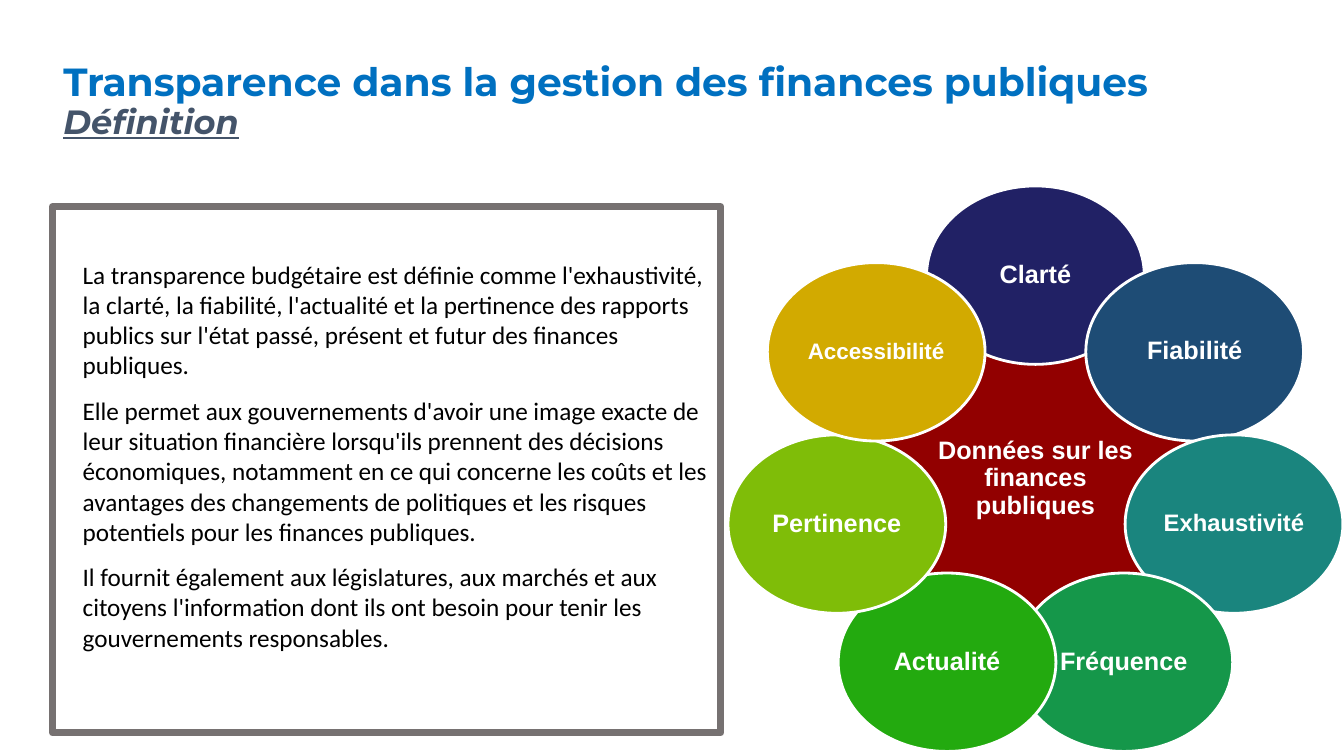
import math

import pptx
import pptx.util
import pptx.dml.color
import pptx.enum.shapes
import pptx.enum.text

Inches, Pt = pptx.util.Inches, pptx.util.Pt
RGBColor = pptx.dml.color.RGBColor
MSO_SHAPE = pptx.enum.shapes.MSO_SHAPE
MSO_ANCHOR = pptx.enum.text.MSO_ANCHOR
PP_ALIGN = pptx.enum.text.PP_ALIGN

COLORS = {
    "white": "FFFFFF", "black": "000000", "frame": "767171",
    "title": "0070C0", "subtitle": "44546A", "hub": "920000",
    "navy": "212165", "blue": "1E4C75", "teal": "1A857E", "emerald": "15974A",
    "green": "23AA0F", "lime": "7FBD08", "gold": "D2AA00",
}

HEADING = [
    ("Transparence dans la gestion des finances publiques", "title",
     {"name": "Montserrat", "size": Pt(28), "bold": True}),
    ("Définition", "subtitle",
     {"name": "Montserrat", "size": Pt(24), "bold": True, "italic": True, "underline": True}),
]

DEFINITION = [
    "La transparence budgétaire est définie comme l'exhaustivité, la clarté, la fiabilité, "
    "l'actualité et la pertinence des rapports publics sur l'état passé, présent et futur "
    "des finances publiques.",
    "Elle permet aux gouvernements d'avoir une image exacte de leur situation financière "
    "lorsqu'ils prennent des décisions économiques, notamment en ce qui concerne les coûts "
    "et les avantages des changements de politiques et les risques potentiels pour les "
    "finances publiques.",
    "Il fournit également aux législatures, aux marchés et aux citoyens l'information dont "
    "ils ont besoin pour tenir les gouvernements responsables.",
]

HUB = ("Données sur les finances publiques", "hub", 18)
QUALITIES = [
    ("Clarté", "navy", 18),
    ("Fiabilité", "blue", 18),
    ("Exhaustivité", "teal", 17),
    ("Fréquence", "emerald", 18),
    ("Actualité", "green", 18),
    ("Pertinence", "lime", 18),
    ("Accessibilité", "gold", 16),
]

CENTER_X, CENTER_Y, RING_RADIUS = 10.27, 4.75, 2.02
HUB_SIZE = (3.09, 3.09)
PETAL_SIZE = (2.16, 1.77)


def rgb(color):
    return RGBColor.from_string(COLORS[color])


def apply(target, values):
    for attribute, value in values.items():
        setattr(target, attribute, value)


def set_margins(frame, left, top, right, bottom):
    apply(frame, {
        "margin_left": Inches(left), "margin_top": Inches(top),
        "margin_right": Inches(right), "margin_bottom": Inches(bottom),
        "word_wrap": True,
    })


def add_run(paragraph, text, color, font):
    run = paragraph.add_run()
    run.text = text
    apply(run.font, font)
    run.font.color.rgb = rgb(color)


def add_oval(slide, label, x, y, size):
    text, color, points = label
    width, height = size
    oval = slide.shapes.add_shape(
        MSO_SHAPE.OVAL, Inches(x - width / 2), Inches(y - height / 2),
        Inches(width), Inches(height))
    oval.shadow.inherit = False
    oval.fill.solid()
    oval.fill.fore_color.rgb = rgb(color)
    oval.line.color.rgb = rgb("white")
    oval.line.width = Pt(2)
    set_margins(oval.text_frame, 0.03, 0.03, 0.03, 0.03)
    oval.text_frame.vertical_anchor = MSO_ANCHOR.MIDDLE
    caption = oval.text_frame.paragraphs[0]
    apply(caption, {"alignment": PP_ALIGN.CENTER, "line_spacing": 0.9})
    add_run(caption, text, "white", {"name": "Arial", "size": Pt(points), "bold": True})


def add_flower(slide):
    add_oval(slide, HUB, CENTER_X, CENTER_Y, HUB_SIZE)
    for index, quality in enumerate(QUALITIES):
        angle = 2 * math.pi * index / len(QUALITIES)
        add_oval(slide, quality, CENTER_X + RING_RADIUS * math.sin(angle),
                 CENTER_Y - RING_RADIUS * math.cos(angle), PETAL_SIZE)


def add_definition(slide):
    panel = slide.shapes.add_shape(
        MSO_SHAPE.RECTANGLE, Inches(0.52), Inches(2.05), Inches(6.63), Inches(5.22))
    panel.shadow.inherit = False
    panel.fill.background()
    panel.line.color.rgb = rgb("frame")
    panel.line.width = Pt(5)
    frame = panel.text_frame
    set_margins(frame, 0.3, 0.52, 0.1, 0.05)
    frame.vertical_anchor = MSO_ANCHOR.TOP
    for index, text in enumerate(DEFINITION):
        paragraph = frame.add_paragraph() if index else frame.paragraphs[0]
        apply(paragraph, {"alignment": PP_ALIGN.LEFT,
                          "space_before": Pt(10.8 if index else 0)})
        add_run(paragraph, text, "black", {"name": "Calibri", "size": Pt(18)})


def add_heading(slide):
    heading = slide.shapes.add_textbox(
        Inches(0.63), Inches(0.62), Inches(11.76), Inches(0.79))
    set_margins(heading.text_frame, 0, 0, 0, 0)
    heading.text_frame.vertical_anchor = MSO_ANCHOR.MIDDLE
    paragraph = heading.text_frame.paragraphs[0]
    paragraph.line_spacing = 0.9
    for index, (text, color, font) in enumerate(HEADING):
        if index:
            paragraph.add_line_break()
        add_run(paragraph, text, color, font)


def main():
    deck = pptx.Presentation()
    apply(deck, {"slide_width": Inches(13.33), "slide_height": Inches(7.5)})
    slide = deck.slides.add_slide(deck.slide_layouts[6])
    add_flower(slide)
    add_definition(slide)
    add_heading(slide)
    deck.save("out.pptx")


if __name__ == "__main__":
    main()
